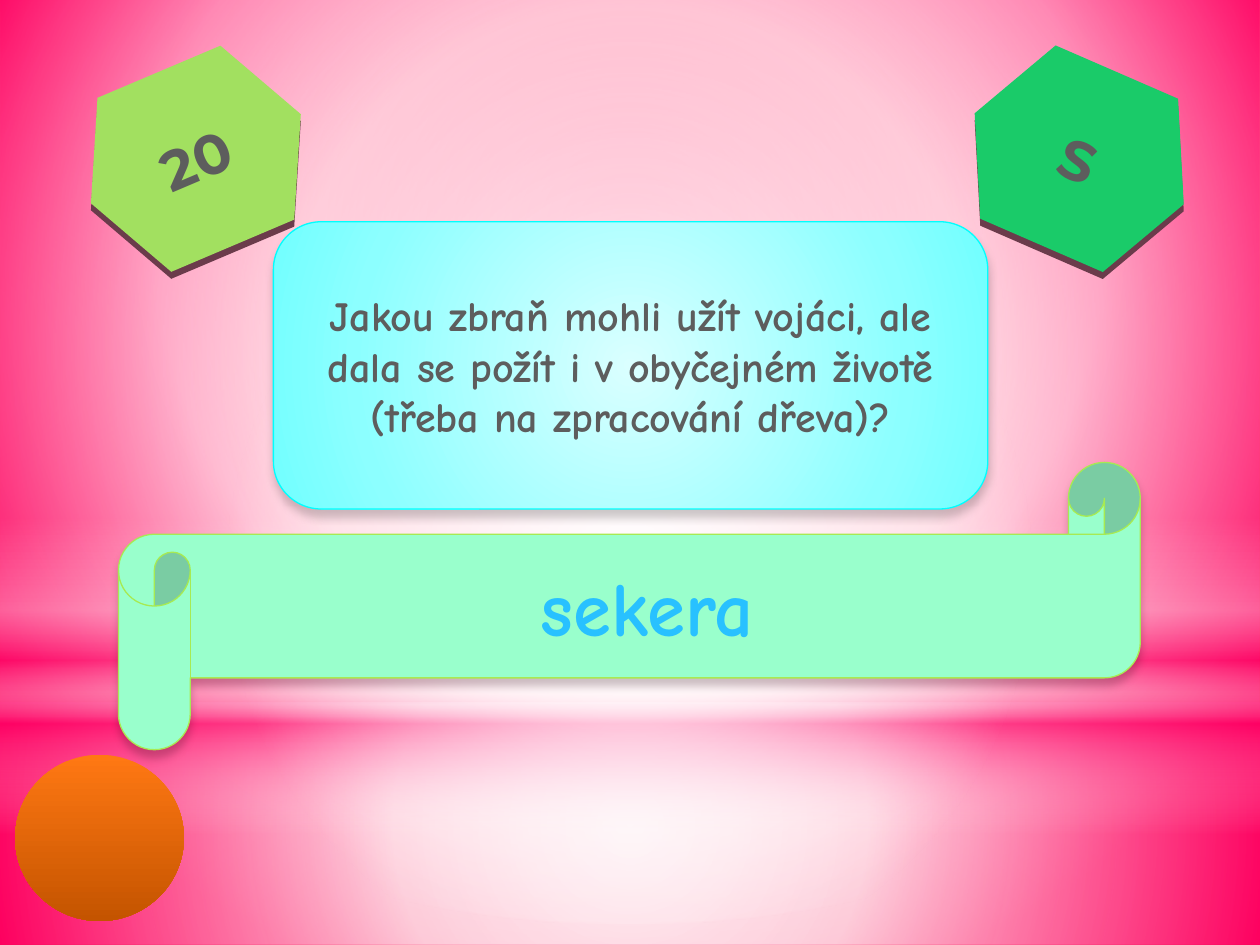
from lxml import etree
from pptx import Presentation
from pptx.dml.color import RGBColor
from pptx.enum.shapes import MSO_SHAPE as SHAPE
from pptx.enum.text import MSO_ANCHOR as ANCHOR, PP_ALIGN as ALIGN
from pptx.oxml.ns import qn
from pptx.util import Inches, Pt

GREY = "5D5D5D"
CENTER = (50, 50, 50, 50)


def rgb(color):
    return RGBColor.from_string(color)


def add_color(parent, color, alpha):
    clr = etree.SubElement(parent, qn("a:srgbClr"), val=color)
    if alpha < 100:
        etree.SubElement(clr, qn("a:alpha"), val=str(alpha * 1000))


def set_gradient(fill, props, stops, focus=None):
    """Fill with (position, colour, alpha) stops: vertical, or circular around focus."""
    fill.solid()
    grad = etree.Element(qn("a:gradFill"), rotWithShape="1")
    gs_list = etree.SubElement(grad, qn("a:gsLst"))
    for pos, color, alpha in stops:
        add_color(etree.SubElement(gs_list, qn("a:gs"), pos=str(pos * 1000)), color, alpha)
    if focus:
        path = etree.SubElement(grad, qn("a:path"))
        path.set("path", "circle")
        sides = {side: str(pct * 1000) for side, pct in zip("ltrb", focus)}
        etree.SubElement(path, qn("a:fillToRect"), **sides)
    else:
        etree.SubElement(grad, qn("a:lin"), ang="5400000", scaled="0")
    props.replace(props.find(qn("a:solidFill")), grad)


def set_shadow(sp, color="000000", alpha=20, blur=5, dist=4):
    effects = sp._element.spPr.find(qn("a:effectLst"))
    shadow = etree.SubElement(effects, qn("a:outerShdw"), blurRad=str(Pt(blur)),
                              dist=str(Pt(dist)), dir="5400000", rotWithShape="0")
    add_color(shadow, color, alpha)


def add_shape(s, kind, box, fill=None, stops=None, focus=None, line=None):
    sp = s.shapes.add_shape(kind, *(Inches(v) for v in box))
    sp.shadow.inherit = False
    if stops:
        set_gradient(sp.fill, sp._element.spPr, stops, focus)
    else:
        sp.fill.solid()
        sp.fill.fore_color.rgb = rgb(fill)
    if line:
        sp.line.color.rgb = rgb(line)
        sp.line.width = Pt(0.75)
    else:
        sp.line.fill.background()
    return sp


def set_text(sp, text, size, color, font="Comic Neue"):
    tf = sp.text_frame
    tf.word_wrap = True
    tf.vertical_anchor = ANCHOR.MIDDLE
    p = tf.paragraphs[0]
    p.alignment = ALIGN.CENTER
    r = p.add_run()
    r.text = text
    r.font.name = font
    r.font.size = Pt(size)
    r.font.bold = True
    r.font.color.rgb = rgb(color)


def add_backdrop(s):
    """Pink background with a wall, a floor, a horizon band and a central glow."""
    bg_fill = s.background.fill
    bg_fill.solid()
    set_gradient(bg_fill, s._element.find(".//" + qn("p:bgPr")),
                 [(0, "FF2163", 100), (60, "FFA7BD", 100), (100, "F80045", 100)],
                 (20, 10, 20, 60))
    white, pink = "FFFFFF", "FF0066"
    layers = [
        (SHAPE.RECTANGLE, (0, 5.58, 10, 1.92), CENTER,
         [(0, white, 91), (37, white, 76), (100, pink, 79)]),
        (SHAPE.RECTANGLE, (0, 0, 10, 5.58), CENTER,
         [(0, white, 89), (48, white, 62), (100, pink, 79)]),
        (SHAPE.RECTANGLE, (0, 4.12, 10, 2.5), None,
         [(0, white, 0), (29, white, 30), (45, pink, 40),
          (55, white, 26), (65, pink, 60), (100, white, 0)]),
        (SHAPE.OVAL, (0, 1.75, 10, 5.58), CENTER,
         [(0, white, 100), (56, white, 0)]),
    ]
    for kind, box, focus, stops in layers:
        add_shape(s, kind, box, stops=stops, focus=focus)


def add_badge(s, box, text, fill, rotation):
    """Tilted hexagon standing on a dark lower edge."""
    sp = add_shape(s, SHAPE.HEXAGON, box, fill=fill)
    sp.rotation = rotation
    set_shadow(sp, "6B3B4B", alpha=100, blur=0, dist=4)
    set_text(sp, text, 32, GREY, "Montserrat")


def add_question(s, box, text):
    sp = add_shape(s, SHAPE.ROUNDED_RECTANGLE, box, line="00FFFF", focus=CENTER,
                   stops=[(0, "DAFFFF", 100), (72, "8CFFFF", 100), (100, "70FFFF", 100)])
    set_shadow(sp)
    set_text(sp, text, 24, GREY)


def add_button(s, box):
    add_shape(s, SHAPE.OVAL, box, stops=[(0, "FF7813", 100), (100, "C45400", 100)])


def add_answer(s, box, text):
    sp = add_shape(s, SHAPE.HORIZONTAL_SCROLL, box, fill="99FFCC", line="A7EA52")
    sp.adjustments[0] = 0.25
    set_shadow(sp)
    set_text(sp, text, 44, "28C1FF")


def main():
    prs = Presentation()
    prs.slide_width, prs.slide_height = Inches(10), Inches(7.5)
    s = prs.slides.add_slide(prs.slide_layouts[6])
    add_backdrop(s)
    add_badge(s, (7.66, 0.51, 1.81, 1.5), "S", "1ACB69", 23.5)
    add_badge(s, (0.65, 0.51, 1.81, 1.5), "20", "A2E060", 337)
    add_question(s, (2.17, 1.76, 5.67, 2.28),
                 "Jakou zbraň mohli užít vojáci, ale dala se požít i v obyčejném "
                 "životě (třeba na zpracování dřeva)?")
    add_button(s, (0.12, 5.99, 1.34, 1.32))
    add_answer(s, (0.94, 3.67, 8.11, 2.28), "sekera")
    prs.save("out.pptx")


if __name__ == "__main__":
    main()
